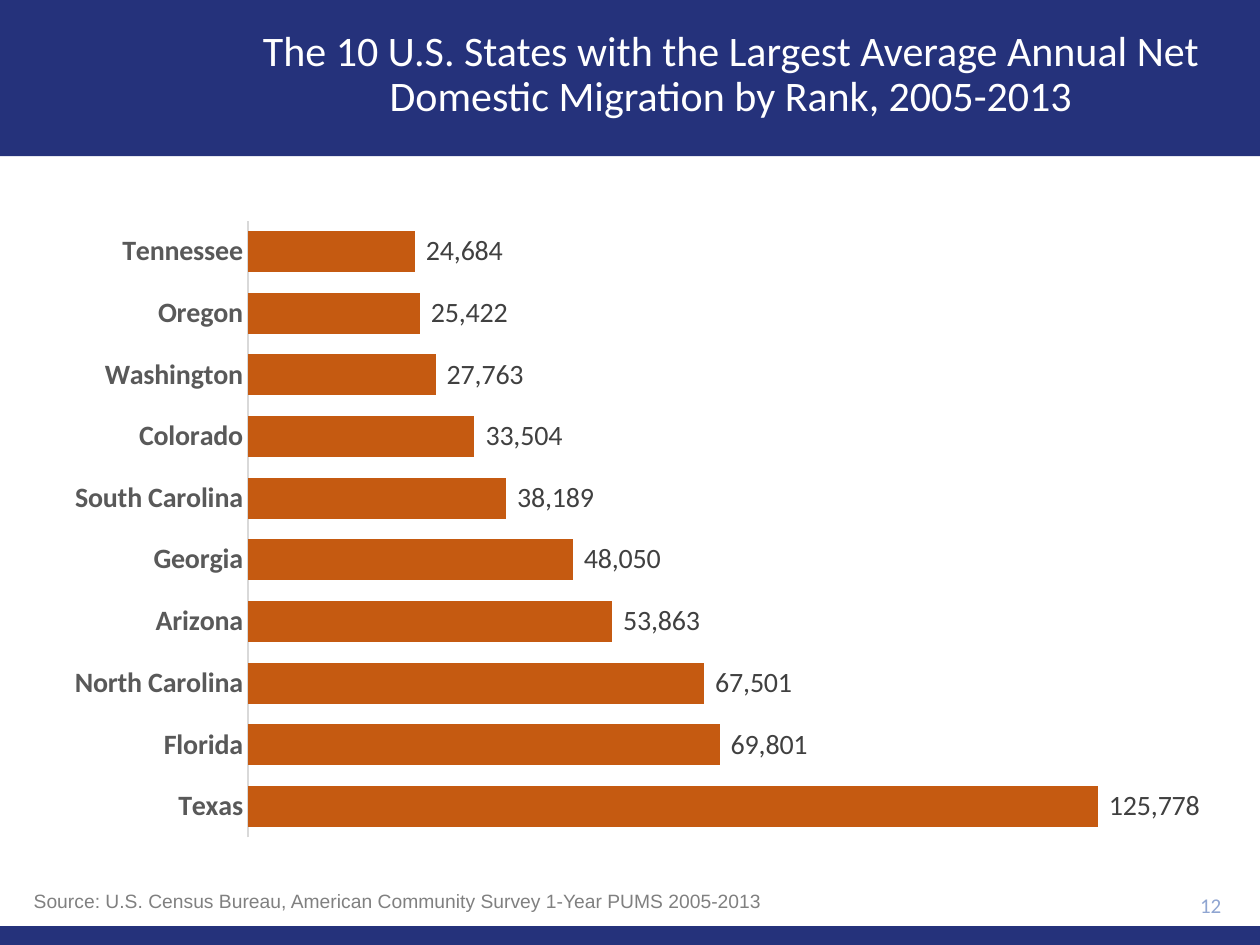
from pptx import Presentation
from pptx.chart.data import CategoryChartData
from pptx.dml.color import RGBColor
from pptx.enum.chart import XL_CHART_TYPE as Chart, XL_LABEL_POSITION as LabelPos, XL_TICK_MARK as Tick
from pptx.enum.shapes import MSO_SHAPE as Shape
from pptx.enum.text import MSO_ANCHOR as Anchor, PP_ALIGN as Align
from pptx.util import Cm, Pt

# Content
TITLE = "The 10 U.S. States with the Largest Average Annual Net Domestic Migration by Rank, 2005-2013"
SOURCE = "Source: U.S. Census Bureau, American Community Survey 1-Year PUMS 2005-2013"
PAGE = "12"
MIGRATION = [
    ("Texas", 125778), ("Florida", 69801), ("North Carolina", 67501),
    ("Arizona", 53863), ("Georgia", 48050), ("South Carolina", 38189),
    ("Colorado", 33504), ("Washington", 27763), ("Oregon", 25422),
    ("Tennessee", 24684),
]
NUMBER_FORMAT = r'_(* #,##0_);_(* \(#,##0\);_(* "-"??_);_('
COLORS = {
    "band": "25327B", "title": "FFFFFF", "bar": "C55A11", "axis": "D9D9D9",
    "state": "595959", "value": "404040", "source": "808080", "page": "8FA5D1",
}
WIDTH, HEIGHT = 25.4, 19.05
BANDS = [(0, 3.15), (18.67, 0.38)]  # top, height


def rgb(name):
    return RGBColor.from_string(COLORS[name])


def set_font(font, size, color, name="Calibri", bold=False):
    font.size, font.name, font.bold = Pt(size), name, bold
    font.color.rgb = rgb(color)


def write(sp, text, size, color, align, anchor, name="Calibri"):
    tf = sp.text_frame
    tf.text, tf.word_wrap, tf.vertical_anchor = text, True, anchor
    p = tf.paragraphs[0]
    p.alignment = align
    set_font(p.font, size, color, name)
    return p


prs = Presentation()
prs.slide_width, prs.slide_height = Cm(WIDTH), Cm(HEIGHT)
slide = prs.slides.add_slide(prs.slide_layouts[5])
shapes = slide.shapes

# Bands at top and bottom
for top, height in BANDS:
    band = shapes.add_shape(Shape.RECTANGLE, 0, Cm(top), Cm(WIDTH), Cm(height))
    band.shadow.inherit = False
    band.fill.solid()
    band.fill.fore_color.rgb = rgb("band")
    band.line.fill.background()

# Title, brought in front of the top band
title = shapes.title
shapes._spTree.append(title._element)
title.left, title.top, title.width, title.height = Cm(4.32), Cm(0.25), Cm(20.83), Cm(2.54)
p = write(title, TITLE, 24, "title", Align.CENTER, Anchor.MIDDLE)
p.line_spacing = 0.9

# Page number
page = shapes.add_textbox(Cm(22.61), Cm(17.81), Cm(2.26), Cm(0.86))
write(page, PAGE, 12, "page", Align.RIGHT, Anchor.MIDDLE)

# Bar chart
data = CategoryChartData()
data.categories = [state for state, _ in MIGRATION]
data.add_series("Series 1", [value for _, value in MIGRATION])
chart = shapes.add_chart(Chart.BAR_CLUSTERED, Cm(1.04), Cm(4.19), Cm(23.5), Cm(12.95), data).chart
chart.has_legend = chart.has_title = False
chart.font.size, chart.font.name = Pt(10), "Calibri"

states = chart.category_axis
states.major_tick_mark = states.minor_tick_mark = Tick.NONE
states.format.line.color.rgb = rgb("axis")
states.format.line.width = Pt(0.75)
set_font(states.tick_labels.font, 16, "state", bold=True)

values = chart.value_axis
values.visible = values.has_major_gridlines = False
values.minimum_scale, values.maximum_scale = 0, 140000

plot = chart.plots[0]
plot.gap_width, plot.vary_by_categories = 50, False
bars = plot.series[0]
bars.format.fill.solid()
bars.format.fill.fore_color.rgb = rgb("bar")

labels = bars.data_labels
labels.show_value, labels.position = True, LabelPos.OUTSIDE_END
labels.number_format, labels.number_format_is_linked = NUMBER_FORMAT, False
set_font(labels.font, 16, "value")

# Source line
source = shapes.add_textbox(Cm(0.43), Cm(17.73), Cm(17.02), Cm(0.79))
p = write(source, SOURCE, 11, "source", Align.LEFT, Anchor.TOP, "Arial")
p.line_spacing = 1.15

prs.save("out.pptx")
